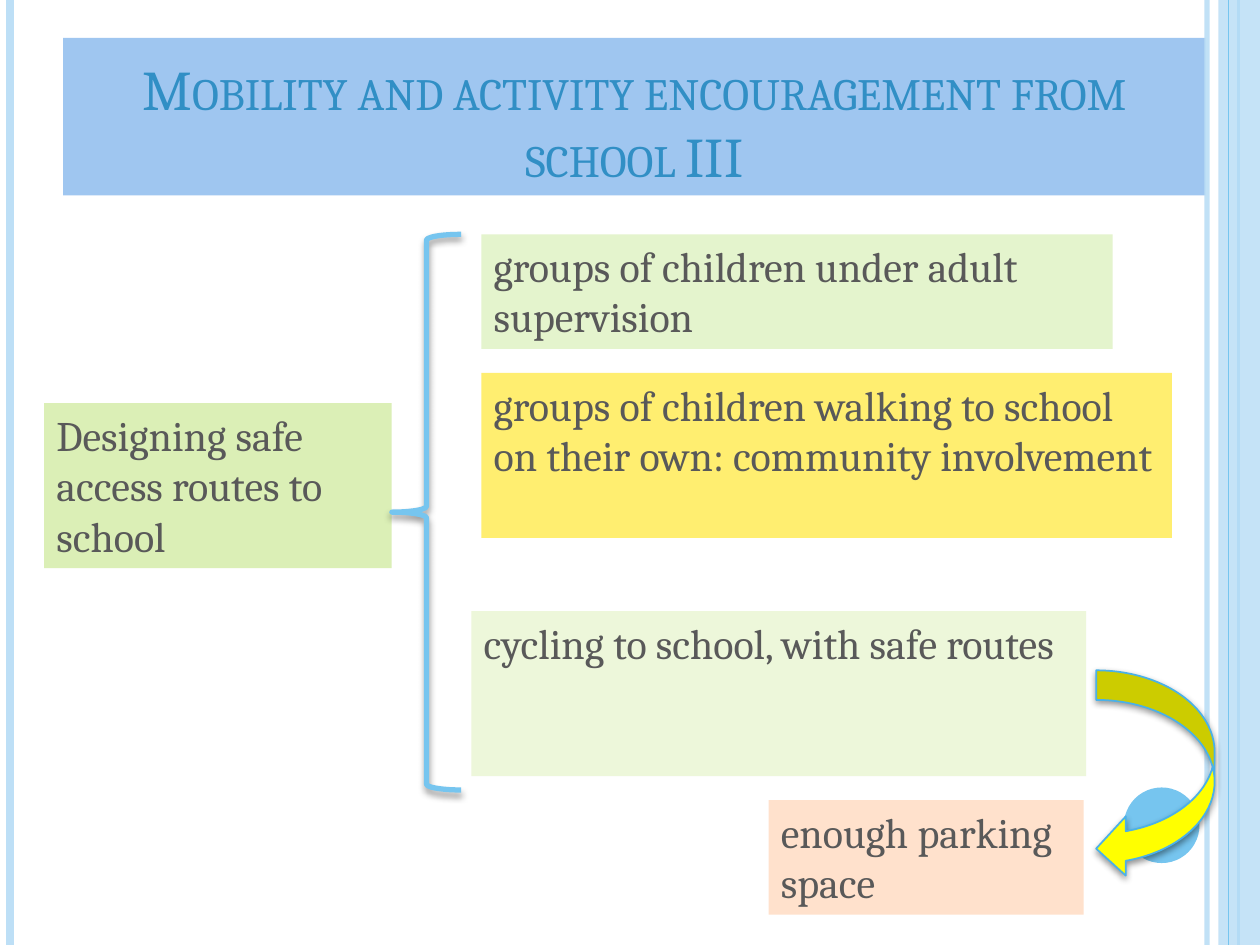
from dataclasses import dataclass

from lxml import etree
from pptx import Presentation
from pptx.dml.color import RGBColor
from pptx.enum.shapes import MSO_CONNECTOR, MSO_SHAPE
from pptx.enum.text import MSO_ANCHOR, MSO_AUTO_SIZE, PP_ALIGN
from pptx.oxml.ns import qn
from pptx.util import Inches, Pt

RECTANGLE, OVAL = MSO_SHAPE.RECTANGLE, MSO_SHAPE.OVAL
BRACE, CURVED_ARROW = MSO_SHAPE.LEFT_BRACE, MSO_SHAPE.CURVED_LEFT_ARROW
STRAIGHT = MSO_CONNECTOR.STRAIGHT
TOP, BOTTOM = MSO_ANCHOR.TOP, MSO_ANCHOR.BOTTOM
LEFT, CENTER = PP_ALIGN.LEFT, PP_ALIGN.CENTER
NO_AUTOFIT = MSO_AUTO_SIZE.NONE
TITLE_ONLY = 5


@dataclass(frozen=True)
class Theme:
    font: str = "Cambria"
    title_size: float = 32
    body_size: float = 24
    title_text: str = "318FC5"
    body_text: str = "595959"
    title_fill: str = "9FC6F0"
    pale_blue: str = "BDDFF6"
    blue: str = "76C5EF"
    arrow_line: str = "4BB1E7"
    arrow_fill: str = "FFFF00"
    topic: str = "DBEFB6"
    supervised: str = "E4F4CD"
    independent: str = "FFEE70"
    cycling: str = "EDF7DA"
    parking: str = "FFE1CC"


THEME = Theme()


def set_values(target, values):
    for name, value in values.items():
        setattr(target, name, value)


def place(shape, box):
    lengths = [Inches(length) for length in box]
    set_values(shape, dict(zip(("left", "top", "width", "height"), lengths)))


def within(box, offset):
    """Turn a box measured from the corner of another into a slide box."""
    left, top, width, height = offset
    return round(box[0] + left, 2), round(box[1] + top, 2), width, height


def set_alpha(shape, percent):
    for color in shape._element.spPr.iter(qn("a:srgbClr")):
        etree.SubElement(color, qn("a:alpha"), val=str(percent * 1000))


def add_shadow(shape, opacity, blur, distance):
    """Drop a black shadow straight down; blur and distance are in points."""
    effects = shape._element.spPr.find(qn("a:effectLst"))
    shadow = etree.SubElement(
        effects, qn("a:outerShdw"), blurRad=str(Pt(blur)), dist=str(Pt(distance)),
        dir="5400000", rotWithShape="0")
    color = etree.SubElement(shadow, qn("a:srgbClr"), val="000000")
    etree.SubElement(color, qn("a:alpha"), val=str(opacity * 1000))


def add_figure(page, kind, box, fill=None, line=None, weight=1):
    shape = page.shapes.add_shape(kind, *[Inches(length) for length in box])
    shape.shadow.inherit = False
    if fill:
        shape.fill.solid()
        shape.fill.fore_color.rgb = RGBColor.from_string(fill)
    else:
        shape.fill.background()
    if line:
        shape.line.color.rgb = RGBColor.from_string(line)
        shape.line.width = Pt(weight)
    else:
        shape.line.fill.background()
    return shape


def add_stripe(page, x, height, color, weight):
    stripe = page.shapes.add_connector(
        STRAIGHT, Inches(x), Inches(0), Inches(x), Inches(height))
    stripe.line.color.rgb = RGBColor.from_string(color)
    stripe.line.width = Pt(weight)
    etree.SubElement(stripe._element.spPr, qn("a:effectLst"))
    return stripe


def write(shape, text, size, color, align, anchor):
    frame = shape.text_frame
    set_values(frame, {"word_wrap": True, "auto_size": NO_AUTOFIT,
                       "vertical_anchor": anchor})
    para = frame.paragraphs[0]
    para.alignment = align
    span = para.add_run()
    span.text = text
    set_values(span.font, {"name": THEME.font, "size": Pt(size), "bold": False})
    span.font.color.rgb = RGBColor.from_string(color)
    return span


def draw_frame(page, box):
    """Draw the stripes, side band and dot at the slide's edges."""
    left, _, width, height = box
    right = left + width
    set_alpha(add_stripe(page, right - 0.42, height, THEME.pale_blue, 3), 93)
    add_stripe(page, left + 0.08, height, THEME.pale_blue, 4.5)
    add_stripe(page, right - 0.17, height, THEME.blue, 1.5)
    band = add_figure(page, RECTANGLE, (right - 0.33, 0, 0.33, height), THEME.pale_blue)
    set_alpha(band, 87)
    add_stripe(page, right - 0.25, height, THEME.blue, 0.75)
    add_figure(page, OVAL, (right - 1.08, height - 1.25, 0.6, 0.6), THEME.blue)


def draw_title(page, box, text):
    title = page.shapes.title
    place(title, box)
    title.fill.solid()
    title.fill.fore_color.rgb = RGBColor.from_string(THEME.title_fill)
    span = write(title, text, THEME.title_size, THEME.title_text, CENTER, BOTTOM)
    span.font._element.set("cap", "small")


def draw_routes(page, box):
    """Draw the topic, the brace and the measures it leads to."""
    labels = (
        ("Designing safe access routes to school", (0, 1.34, 2.76, 1.31), THEME.topic),
        ("groups of children under adult supervision",
         (3.47, 0, 5.01, 0.91), THEME.supervised),
        ("groups of children walking to school on their own: community involvement",
         (3.47, 1.1, 5.48, 1.31), THEME.independent),
        ("cycling to school, with safe routes", (3.39, 2.99, 4.88, 1.31), THEME.cycling),
        ("enough parking space", (5.75, 4.49, 2.5, 0.91), THEME.parking),
    )
    for text, offset, fill in labels:
        label = add_figure(page, RECTANGLE, within(box, offset), fill)
        write(label, text, THEME.body_size, THEME.body_text, LEFT, TOP)
    brace = add_figure(page, BRACE, within(box, (2.76, 0, 0.55, 4.41)),
                       line=THEME.blue, weight=3)
    add_shadow(brace, 40, 4, 2)
    arrow = add_figure(page, CURVED_ARROW, within(box, (8.35, 3.46, 0.94, 1.65)),
                       THEME.arrow_fill, THEME.arrow_line)
    add_shadow(arrow, 42, 4, 1.6)


def main():
    deck = Presentation()
    set_values(deck, {"slide_width": Inches(10), "slide_height": Inches(7.5)})
    page = deck.slides.add_slide(deck.slide_layouts[TITLE_ONLY])
    draw_frame(page, (0, 0, 10, 7.5))
    draw_title(page, (0.5, 0.3, 9.07, 1.25),
               "Mobility and activity encouragement from school III")
    draw_routes(page, (0.35, 1.86, 9.29, 5.4))
    deck.save("out.pptx")


if __name__ == "__main__":
    main()
